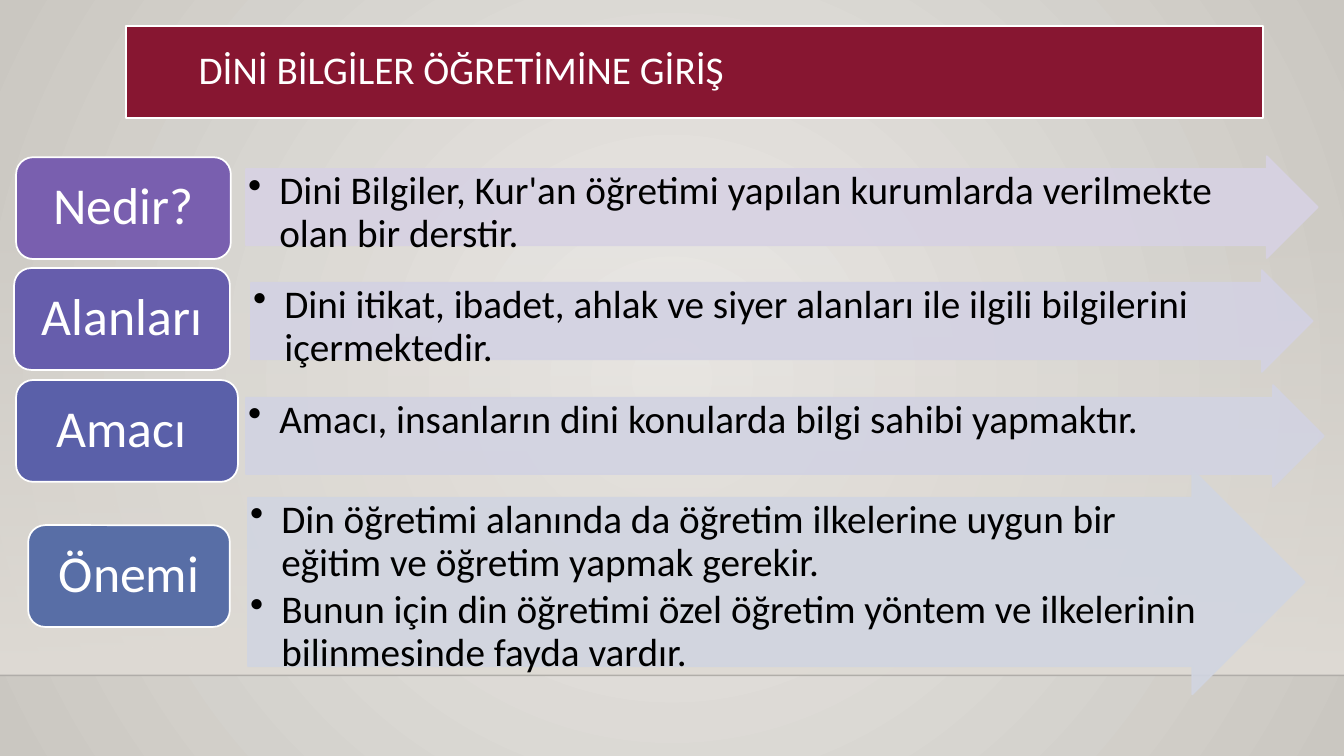
import pptx
import pptx.util
import pptx.dml.color
import pptx.enum.shapes
import pptx.enum.text
import pptx.oxml
import pptx.oxml.ns

Inches, Pt = pptx.util.Inches, pptx.util.Pt
SHAPE = pptx.enum.shapes.MSO_SHAPE
ANCHOR = pptx.enum.text.MSO_ANCHOR
ALIGN = pptx.enum.text.PP_ALIGN
A = pptx.oxml.ns.nsdecls("a")


def rgb(value):
    return pptx.dml.color.RGBColor.from_string(value)


def style(sp, text, fill, line, size, color, anchor, align, insets):
    sp.fill.solid()
    sp.fill.fore_color.rgb = rgb(fill)
    sp.line.color.rgb = rgb(line)
    sp.line.width = Pt(1.25)
    tf = sp.text_frame
    tf.text = text
    frame = {"word_wrap": True, "auto_size": pptx.enum.text.MSO_AUTO_SIZE.NONE,
             "vertical_anchor": anchor}
    sides = ("left", "top", "right", "bottom")
    frame.update({f"margin_{side}": Inches(n) for side, n in zip(sides, insets)})
    for name, value in frame.items():
        setattr(tf, name, value)
    for p in tf.paragraphs:
        for name, value in {"alignment": align, "line_spacing": 0.9, "space_after": Pt(4)}.items():
            setattr(p, name, value)
        font = {"name": "Calibri", "size": Pt(size), "bold": False}
        for name, value in font.items():
            setattr(p.runs[0].font, name, value)
        p.runs[0].font.color.rgb = rgb(color)


prs = pptx.Presentation()
prs.slide_width, prs.slide_height = Inches(13.33), Inches(7.5)
s = prs.slides.add_slide(prs.slide_layouts[5])

floor = s.shapes.add_shape(SHAPE.RECTANGLE, 0, Inches(2.21), Inches(13.33), Inches(4.49))
floor.shadow.inherit = False
floor.line.fill.background()
for fill, colors in ((s.background.fill, ("ECEAE7", "CAC7C1")), (floor.fill, ("DFDBD5", "DFDBD5"))):
    fill.gradient()
    for stop, color in zip(fill.gradient_stops, colors):
        stop.color.rgb = rgb(color)
floor.fill.gradient_angle = 270
floor.element.xpath(".//a:gs/a:srgbClr")[0].append(pptx.oxml.parse_xml(f'<a:alpha {A} val="0"/>'))
lin = s.element.xpath(".//p:bg//a:lin")[0]
lin.getparent().replace(lin, pptx.oxml.parse_xml(
    f'<a:path {A} path="circle"><a:fillToRect l="50000" t="50000" r="50000" b="50000"/></a:path>'))

horizon = s.shapes.add_connector(pptx.enum.shapes.MSO_CONNECTOR.STRAIGHT,
                                 0, Inches(6.7), Inches(13.33), Inches(6.7))
horizon.line.color.rgb = rgb("000001")
horizon.line.width = Pt(1)
horizon.element.xpath(".//a:ln//a:srgbClr")[0].append(pptx.oxml.parse_xml(f'<a:alpha {A} val="20000"/>'))
horizon.element.spPr.append(pptx.oxml.parse_xml(f"<a:effectLst {A}/>"))

title = s.shapes.title
title.left, title.top, title.width, title.height = map(Inches, (1.25, 0.26, 11.28, 0.91))
style(title, "DİNİ BİLGİLER ÖĞRETİMİNE GİRİŞ", "871631", "FFFFFF", 28, "FFFFFF",
      ANCHOR.MIDDLE, ALIGN.LEFT, (0.72, 0.08, 0.08, 0.08))

rows = [
    ("Nedir?", "795FAF", (0.16, 1.56, 2.13, 1.01), "D7D2E3", (2.44, 1.55, 10.63, 1.01),
     ["Dini Bilgiler, Kur'an öğretimi yapılan kurumlarda verilmekte olan bir derstir."]),
    ("Alanları", "665DAC", (0.14, 2.66, 2.14, 1.01), "D3D2E3", (2.49, 2.68, 10.53, 1.01),
     ["Dini itikat, ibadet, ahlak ve siyer alanları ile ilgili bilgilerini içermektedir."]),
    ("Amacı ", "5A60A9", (0.16, 3.77, 2.2, 1.01), "D2D3E2", (2.44, 3.82, 10.69, 1.01),
     ["Amacı, insanların dini konularda bilgi sahibi yapmaktır."]),
    ("Önemi", "586EA6", (0.28, 5.21, 2, 1.01), "D1D5E1", (2.46, 4.66, 10.48, 2.23),
     ["Din öğretimi alanında da öğretim ilkelerine uygun bir eğitim ve öğretim yapmak gerekir.",
      "Bunun için din öğretimi özel öğretim yöntem ve ilkelerinin bilinmesinde fayda vardır."]),
]
for label, label_fill, label_box, arrow_fill, arrow_box, points in rows:
    arrow = s.shapes.add_shape(SHAPE.RIGHT_ARROW, *map(Inches, arrow_box))
    arrow.shadow.inherit = False
    arrow.adjustments[0] = 0.75
    style(arrow, "\n".join(points), arrow_fill, arrow_fill, 28, "000000",
          ANCHOR.TOP, ALIGN.LEFT, (0.02, 0.02, 0.02, 0.02))
    for clr in arrow.element.spPr.xpath(".//a:srgbClr"):
        clr.append(pptx.oxml.parse_xml(f'<a:alpha {A} val="90000"/>'))
    for p in arrow.text_frame.paragraphs:
        pPr = p._p.get_or_add_pPr()
        pPr.set("marL", str(Inches(0.31)))
        pPr.set("indent", str(Inches(-0.31)))
        pPr.append(pptx.oxml.parse_xml(f'<a:buChar {A} char="•"/>'))

    tag = s.shapes.add_shape(SHAPE.ROUNDED_RECTANGLE, *map(Inches, label_box))
    tag.shadow.inherit = False
    style(tag, label, label_fill, "FFFFFF", 37, "FFFFFF",
          ANCHOR.MIDDLE, ALIGN.CENTER, (0.15, 0.08, 0.15, 0.08))

prs.save("out.pptx")
